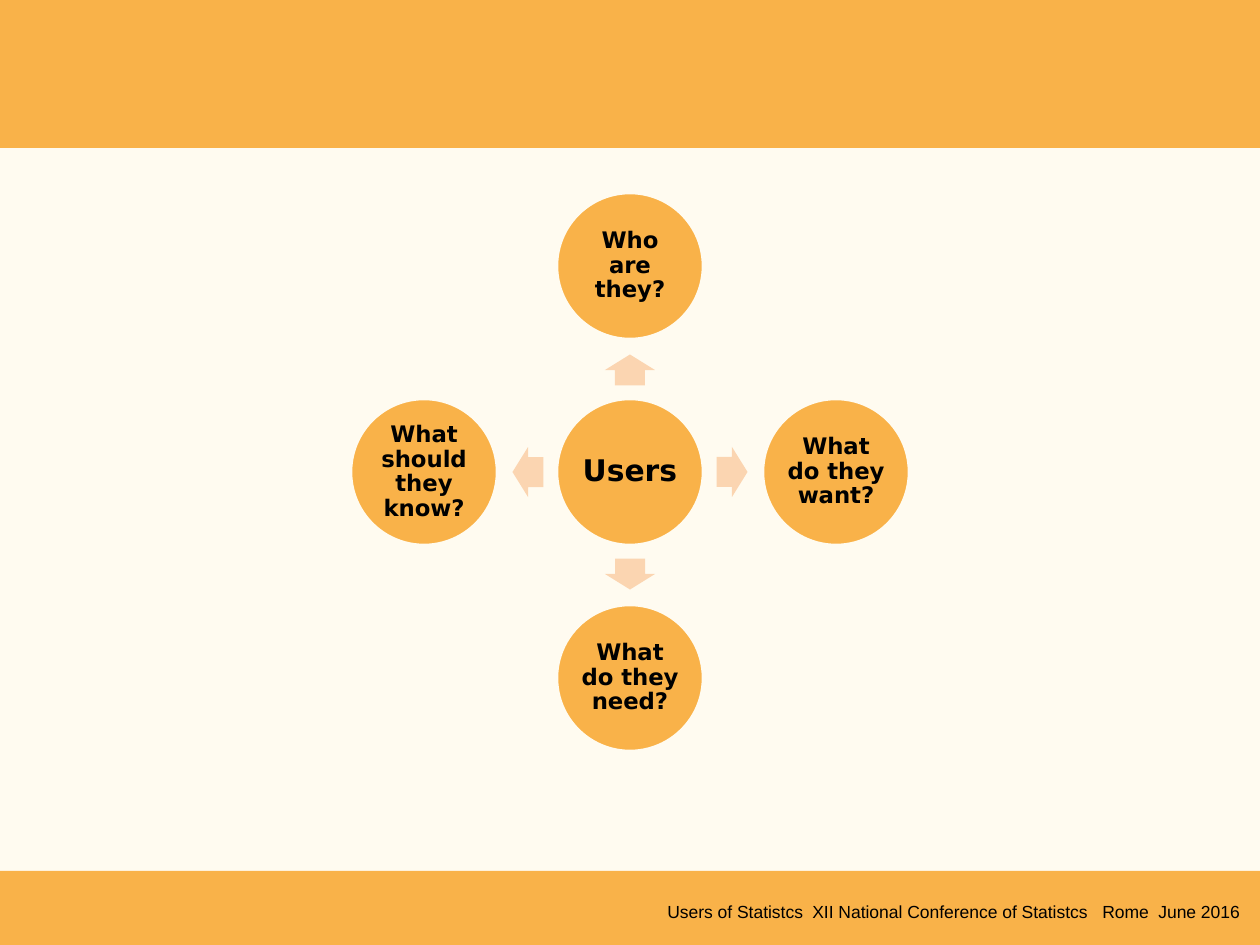
"""Build the slide of four questions around the users of statistics."""
import pptx
import pptx.dml.color
import pptx.enum.shapes
import pptx.enum.text
import pptx.util
from lxml import etree

PX = 914400 / 126
ORANGE = pptx.dml.color.RGBColor(0xF9, 0xB2, 0x49)
PEACH = pptx.dml.color.RGBColor(0xFB, 0xD5, 0xB1)
CREAM = pptx.dml.color.RGBColor(0xFF, 0xFB, 0xF0)
BLACK = pptx.dml.color.RGBColor(0, 0, 0)
SHAPE = pptx.enum.shapes.MSO_SHAPE
A = "{http://schemas.openxmlformats.org/drawingml/2006/main}"


def px(*values):
    return [pptx.util.Emu(round(v * PX)) for v in values]


def add_filled(kind, x, y, w, h, color):
    sp = s.shapes.add_shape(kind, *px(x, y, w, h))
    sp.shadow.inherit = False
    sp.fill.solid()
    sp.fill.fore_color.rgb = color
    sp.line.fill.background()
    return sp


prs = pptx.Presentation()
prs.slide_width, prs.slide_height = px(1260, 945)
s = prs.slides.add_slide(prs.slide_layouts[6])
s.background.fill.solid()
s.background.fill.fore_color.rgb = CREAM

add_filled(SHAPE.RECTANGLE, 0, 871, 1260, 74, ORANGE)
add_filled(SHAPE.RECTANGLE, 0, 0, 1260, 148, ORANGE)

footer = s.shapes.add_textbox(*px(655, 895, 605, 34))
footer.text_frame.word_wrap = True
p = footer.text_frame.paragraphs[0]
p.text = "Users of Statistcs\tXII National Conference of Statistcs\tRome\tJune 2016"
tabs = etree.SubElement(p._p.get_or_add_pPr(), A + "tabLst")
for stop in px(145, 435, 491):
    etree.SubElement(tabs, A + "tab", pos=str(stop), algn="l")
for r in p.runs:
    r.font.size = pptx.util.Pt(10)
    r.font.name = "Arial"
    r.font.color.rgb = BLACK

CX, CY, DIAMETER, STEP = 630, 472, 147, 206
ARROW_W, ARROW_H, ARROW_STEP = 31, 50, 102
nodes = [
    ("Users", 17, 0, 0, None),
    ("Who are they?", 13, 0, -1, 270),
    ("What do they want?", 13, 1, 0, 0),
    ("What do they need?", 13, 0, 1, 90),
    ("What should they know?", 13, -1, 0, 180),
]
for text, size, dx, dy, angle in nodes:
    if angle is not None:
        arrow = add_filled(SHAPE.RIGHT_ARROW,
                           CX + dx * ARROW_STEP - ARROW_W / 2,
                           CY + dy * ARROW_STEP - ARROW_H / 2,
                           ARROW_W, ARROW_H, PEACH)
        arrow.adjustments[0] = 0.6
        arrow.adjustments[1] = 0.5
        arrow.rotation = angle
    circle = add_filled(SHAPE.OVAL, CX + dx * STEP - DIAMETER / 2,
                        CY + dy * STEP - DIAMETER / 2,
                        DIAMETER, DIAMETER, ORANGE)
    circle.line.color.rgb = CREAM
    circle.line.width = pptx.util.Pt(2)
    tf = circle.text_frame
    tf.word_wrap = True
    tf.vertical_anchor = pptx.enum.text.MSO_ANCHOR.MIDDLE
    tf.margin_left, tf.margin_top, tf.margin_right, tf.margin_bottom = px(2, 2, 2, 2)
    tf.text = text
    p = tf.paragraphs[0]
    p.alignment = pptx.enum.text.PP_ALIGN.CENTER
    p.line_spacing = 0.9
    r = p.runs[0]
    r.font.size = pptx.util.Pt(size)
    r.font.name = "DejaVu Sans"
    r.font.bold = True
    r.font.color.rgb = BLACK

prs.save("out.pptx")
